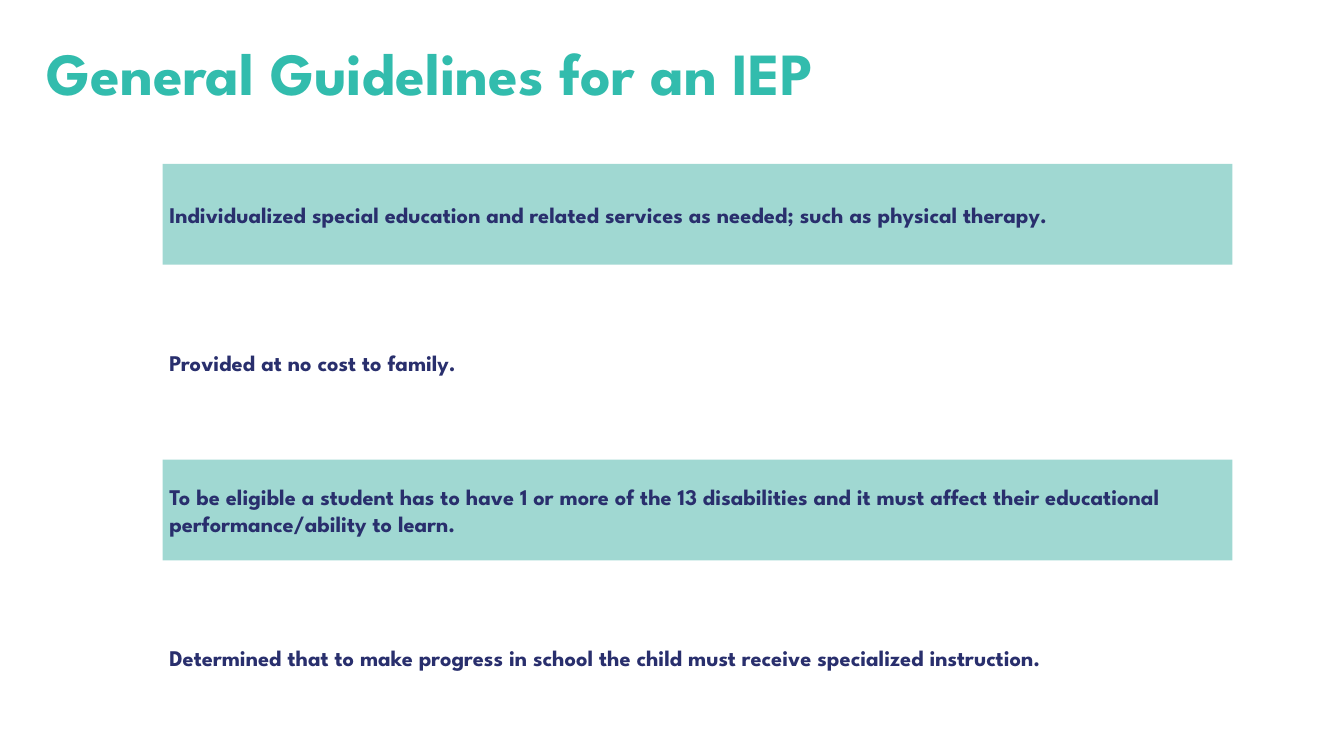
from pptx import Presentation
from pptx import util as u
from pptx.dml import color
from pptx.enum import shapes, text

COLOURS = {"title": "32BCAD", "band": "A0D8D2", "body": "292F6D"}
FONT = "League Spartan"
INSET = 3.6
GUIDELINES = [
    "Individualized special education and related services as needed; such as physical therapy.",
    "Provided at no cost to family.",
    "To be eligible a student has to have 1 or more of the 13 disabilities "
    "and it must affect their educational performance/ability to learn.",
    "Determined that to make progress in school the child must receive specialized instruction.",
]
ROW_LEFT, ROW_TOP, ROW_WIDTH, ROW_HEIGHT = 87.12, 87.84, 573.12, 54
ROW_PITCH = 79.2


def colour(name):
    return color.RGBColor.from_string(COLOURS[name])


def write(box, wording, size, ink, anchor):
    frame = box.text_frame
    frame.word_wrap = True
    frame.vertical_anchor = anchor
    frame.margin_left = frame.margin_right = u.Pt(INSET)
    frame.margin_top = frame.margin_bottom = u.Pt(INSET)
    para = frame.paragraphs[0]
    para.text = wording
    para.alignment = text.PP_ALIGN.LEFT
    para.font.name = FONT
    para.font.size = u.Pt(size)
    para.font.bold = True
    para.font.color.rgb = colour(ink)


def add_title(page, wording):
    box = page.shapes.add_textbox(u.Pt(21.6), u.Pt(15.84), u.Pt(648), u.Pt(51.84))
    write(box, wording, 32, "title", text.MSO_ANCHOR.TOP)


def add_guideline(page, index, wording):
    place = [u.Pt(length) for length in
             (ROW_LEFT, ROW_TOP + index * ROW_PITCH, ROW_WIDTH, ROW_HEIGHT)]
    if index % 2 == 0:
        box = page.shapes.add_shape(shapes.MSO_SHAPE.RECTANGLE, *place)
        box.shadow.inherit = False
        box.fill.solid()
        box.fill.fore_color.rgb = colour("band")
        box.line.fill.background()
    else:
        box = page.shapes.add_textbox(*place)
    write(box, wording, 12, "body", text.MSO_ANCHOR.MIDDLE)


def main():
    deck = Presentation()
    deck.slide_width, deck.slide_height = u.Pt(720), u.Pt(405)
    page = deck.slides.add_slide(deck.slide_layouts[6])
    add_title(page, "General Guidelines for an IEP")
    for index, wording in enumerate(GUIDELINES):
        add_guideline(page, index, wording)
    deck.save("out.pptx")


if __name__ == "__main__":
    main()
